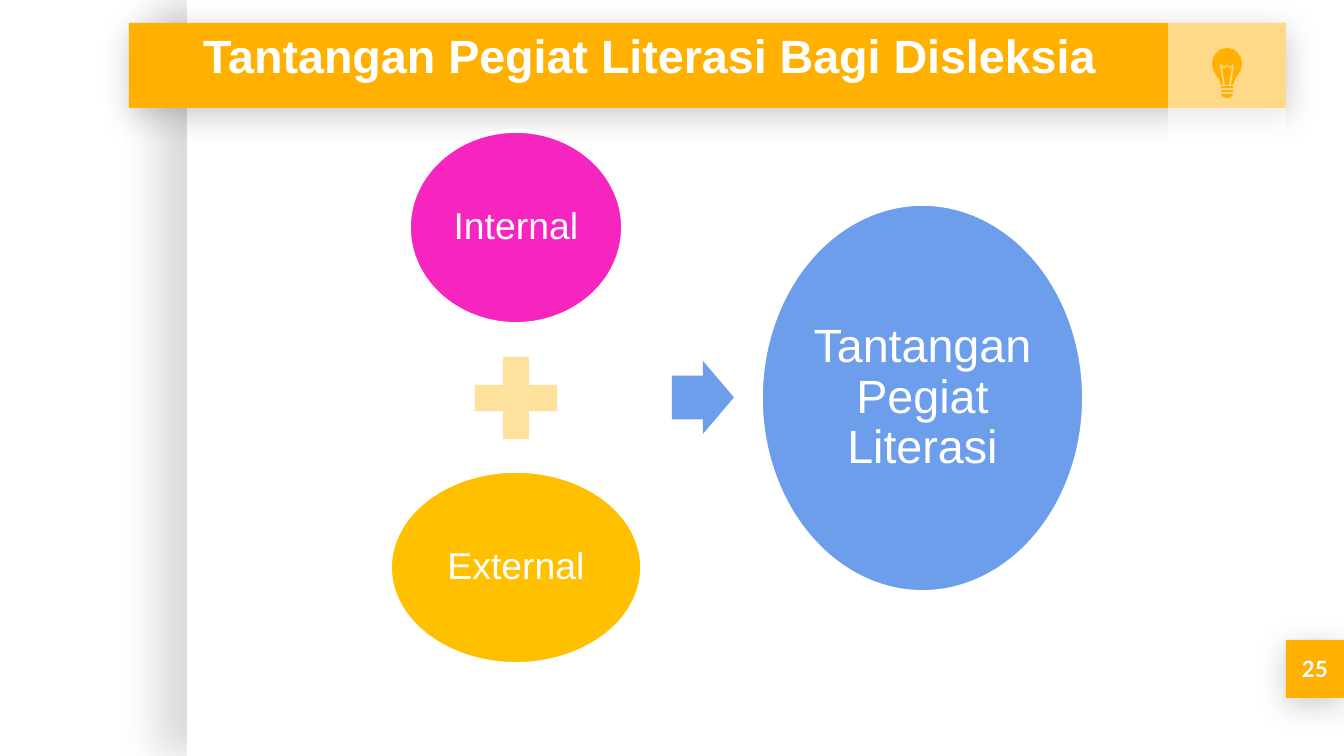
"""Build the slide on the challenges of literacy workers for dyslexia."""
from lxml import etree
from pptx import Presentation
from pptx.dml.color import RGBColor
from pptx.enum.shapes import MSO_SHAPE
from pptx.enum.text import MSO_ANCHOR, PP_ALIGN
from pptx.oxml.ns import qn
from pptx.util import Emu, Pt

PX = 914400 / 134.4
RECT, OVAL = MSO_SHAPE.RECTANGLE, MSO_SHAPE.OVAL
PLUS, ARROW = MSO_SHAPE.MATH_PLUS, MSO_SHAPE.RIGHT_ARROW
MIDDLE, CENTER, LEFT = MSO_ANCHOR.MIDDLE, PP_ALIGN.CENTER, PP_ALIGN.LEFT
COLORS = {
    "white": "FFFFFF", "amber": "FFB000", "pink": "F725C0",
    "gold": "FFC000", "cream": "FFE19E", "blue": "6D9EEB",
}

deck = Presentation()
deck.slide_width, deck.slide_height = Emu(round(1344 * PX)), Emu(round(756 * PX))
slide = deck.slides.add_slide(deck.slide_layouts[6])


def add_box(kind, bounds, color, shadow=None):
    box = slide.shapes.add_shape(kind, *[Emu(round(n * PX)) for n in bounds])
    box.fill.solid()
    box.fill.fore_color.rgb = RGBColor.from_string(COLORS[color])
    box.line.fill.background()
    box.shadow.inherit = False
    if shadow:
        alpha, blur, distance, angle = shadow
        effects = box._element.spPr.find(qn("a:effectLst"))
        outer = etree.SubElement(
            effects, qn("a:outerShdw"), blurRad=str(Pt(blur)), dist=str(Pt(distance)),
            dir=str(angle * 60000), algn="bl", rotWithShape="0")
        tone = etree.SubElement(outer, qn("a:srgbClr"), val="000000")
        etree.SubElement(tone, qn("a:alpha"), val=str(alpha * 1000))
    return box


def add_text(box, text, size, font="Arial", bold=False, align=CENTER, spacing=1.0):
    box.text_frame.word_wrap = True
    para = box.text_frame.paragraphs[0]
    para.alignment = align
    para.line_spacing = spacing
    span = para.add_run()
    span.text = text
    span.font.size = Pt(size)
    span.font.name = font
    span.font.bold = bold
    span.font.color.rgb = RGBColor.from_string(COLORS["white"])


drop = (20, 16.9, 3.8, 90)
add_box(RECT, (187, 0, 1157, 756), "white", (15, 22.5, 15, 180))
number = add_box(RECT, (1286, 640, 58, 58), "amber", drop)
number.text_frame.vertical_anchor = MIDDLE
number.text_frame.margin_left = number.text_frame.margin_right = Emu(round(13 * PX))
add_text(number, "25", 12, "Lato", True)
add_box(RECT, (129, 23, 1157, 85), "amber", drop)
icon_panel = add_box(RECT, (1168, 23, 118, 118), "white")
panel_color = icon_panel._element.spPr.find(qn("a:solidFill"))[0]
etree.SubElement(panel_color, qn("a:alpha"), val="53000")

bulb_center = 1227
bulb_halves = [
    [(0, 48), (6, 49), (11, 53), (14, 58), (15, 64), (14, 70), (11, 75), (8, 79),
     (6, 85), (4, 85), (7, 66), (6, 64), (3, 67), (0, 64)],
    [(0, 66), (3, 69), (5, 67), (2, 85)],
    [(6, 86), (6, 88)],
    [(6, 90), (6, 92)],
    [(6, 94), (5, 96), (2, 98)],
]
for half in bulb_halves:
    outline = [(bulb_center + x, y) for x, y in half]
    outline += [(bulb_center - x, y) for x, y in reversed(half)]
    builder = slide.shapes.build_freeform(*outline[0], scale=PX)
    builder.add_line_segments(outline[1:], close=True)
    part = builder.convert_to_shape()
    part.fill.solid()
    part.fill.fore_color.rgb = RGBColor.from_string(COLORS["amber"])
    part.line.fill.background()
    part.shadow.inherit = False

circles = [
    ("Internal", (409, 131, 214, 193), "pink", 20),
    ("External", (390, 471, 252, 193), "gold", 20),
    ("Tantangan Pegiat Literasi", (761, 204, 323, 388), "blue", 25),
]
for label, bounds, color, size in circles:
    circle = add_box(OVAL, bounds, color)
    circle.line.color.rgb = RGBColor.from_string(COLORS["white"])
    circle.line.width = Pt(2)
    frame = circle.text_frame
    frame.vertical_anchor = MIDDLE
    frame.margin_left = frame.margin_right = Emu(round(4 * PX))
    frame.margin_top = frame.margin_bottom = Emu(round(4 * PX))
    add_text(circle, label, size, spacing=0.9)

add_box(PLUS, (460, 342, 112, 112), "cream")
arrow = add_box(ARROW, (672, 361, 62, 73), "blue")
arrow.adjustments[0] = 0.6

title = slide.shapes.add_textbox(*[Emu(round(n * PX)) for n in (190, 20, 996, 70)])
add_text(title, "Tantangan Pegiat Literasi Bagi Disleksia", 25, bold=True, align=LEFT)

deck.save("out.pptx")
